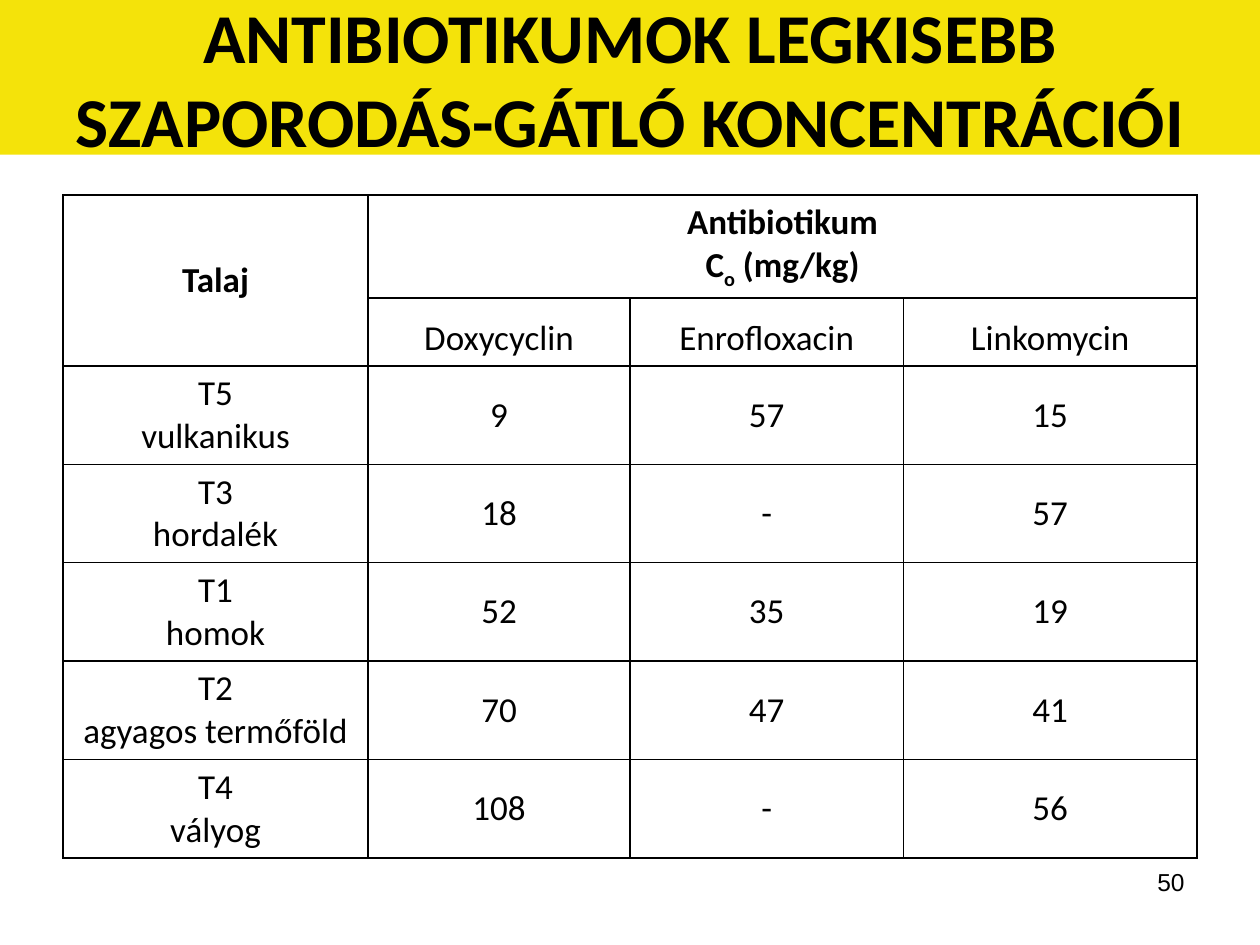
from lxml.etree import SubElement
from pptx import Presentation
from pptx.dml.color import RGBColor
from pptx.enum.text import MSO_ANCHOR as Anchor, MSO_AUTO_SIZE as AutoSize, PP_ALIGN as Align
from pptx.oxml.ns import qn
from pptx.util import Cm, Pt

# Content
TITLE = "ANTIBIOTIKUMOK LEGKISEBB SZAPORODÁS-GÁTLÓ KONCENTRÁCIÓI"
PAGE_NUMBER = "50"
SOIL_HEADER = ["Talaj"]
GROUP_HEADER = ["Antibiotikum", ("C", "o", " (mg/kg)")]  # tuple: base, subscript, rest
DRUGS = ["Doxycyclin", "Enrofloxacin", "Linkomycin"]
SOILS = [
    ("T5", "vulkanikus", ["9", "57", "15"]),
    ("T3", "hordalék", ["18", "-", "57"]),
    ("T1", "homok", ["52", "35", "19"]),
    ("T2", "agyagos termőföld", ["70", "47", "41"]),
    ("T4", "vályog", ["108", "-", "56"]),
]


class Theme:
    black = RGBColor(0x00, 0x00, 0x00)
    yellow = RGBColor(0xF4, 0xE3, 0x0A)
    font, number_font = "Calibri", "Arial"
    title, body, number = Pt(40), Pt(20), Pt(14)
    border = Pt(1)


# Layout
COLUMN_WIDTHS = [6.15, 5.28, 5.51, 5.92]
ROW_HEIGHTS = [2.0, 1.37] + [1.98] * len(SOILS)


def style(para, size, bold=False, align=Align.CENTER, name=Theme.font):
    para.alignment = align
    font = para.font
    font.name, font.size, font.bold = name, size, bold
    font.color.rgb = Theme.black


def draw_borders(cell):
    properties = cell._tc.get_or_add_tcPr()
    for side in ("lnL", "lnR", "lnT", "lnB"):
        line = SubElement(properties, qn(f"a:{side}"), w=str(Theme.border))
        fill = SubElement(line, qn("a:solidFill"))
        SubElement(fill, qn("a:srgbClr"), val=str(Theme.black))


def write_cell(cell, lines, bold=False, anchor=Anchor.MIDDLE):
    cell.vertical_anchor = anchor
    frame = cell.text_frame
    for index, line in enumerate(lines):
        para = frame.add_paragraph() if index else frame.paragraphs[0]
        style(para, Theme.body, bold)
        parts = line if isinstance(line, tuple) else (line,)
        for position, text in enumerate(parts):
            span = para.add_run()
            span.text = text
            if position == 1:
                span.font._element.set("baseline", "-25000")


def add_title(page):
    title = page.shapes.title
    title.left, title.top, title.width, title.height = Cm(0), Cm(0), Cm(25.4), Cm(3.12)
    title.fill.solid()
    title.fill.fore_color.rgb = Theme.yellow
    frame = title.text_frame
    frame.text = TITLE
    frame.word_wrap = True
    frame.auto_size = AutoSize.NONE
    frame.vertical_anchor = Anchor.MIDDLE
    style(frame.paragraphs[0], Theme.title, bold=True)


def add_concentrations(page):
    table = page.shapes.add_table(
        len(ROW_HEIGHTS), len(COLUMN_WIDTHS), Cm(1.27), Cm(3.93),
        Cm(sum(COLUMN_WIDTHS)), Cm(sum(ROW_HEIGHTS))).table
    table.first_row = table.horz_banding = False
    for column, width in zip(table.columns, COLUMN_WIDTHS):
        column.width = Cm(width)
    for row, height in zip(table.rows, ROW_HEIGHTS):
        row.height = Cm(height)
    for cell in table.iter_cells():
        draw_borders(cell)
        cell.fill.background()

    # Headers
    table.cell(0, 0).merge(table.cell(1, 0))
    table.cell(0, 1).merge(table.cell(0, len(DRUGS)))
    write_cell(table.cell(0, 0), SOIL_HEADER, bold=True)
    write_cell(table.cell(0, 1), GROUP_HEADER, bold=True)
    for column, drug in enumerate(DRUGS, start=1):
        write_cell(table.cell(1, column), [drug], anchor=Anchor.BOTTOM)

    # Soils
    for row, (code, soil, values) in enumerate(SOILS, start=2):
        write_cell(table.cell(row, 0), [code, soil], anchor=Anchor.BOTTOM)
        for column, value in enumerate(values, start=1):
            write_cell(table.cell(row, column), [value])


def add_page_number(page):
    box = page.shapes.add_textbox(Cm(18.2), Cm(17.35), Cm(5.93), Cm(1.32))
    box.text_frame.word_wrap = True
    box.text_frame.text = PAGE_NUMBER
    style(box.text_frame.paragraphs[0], Theme.number,
          align=Align.RIGHT, name=Theme.number_font)


def main():
    deck = Presentation()
    deck.slide_width, deck.slide_height = Cm(25.4), Cm(19.05)
    page = deck.slides.add_slide(deck.slide_layouts.get_by_name("Title Only"))
    add_title(page)
    add_concentrations(page)
    add_page_number(page)
    deck.save("out.pptx")


if __name__ == "__main__":
    main()
